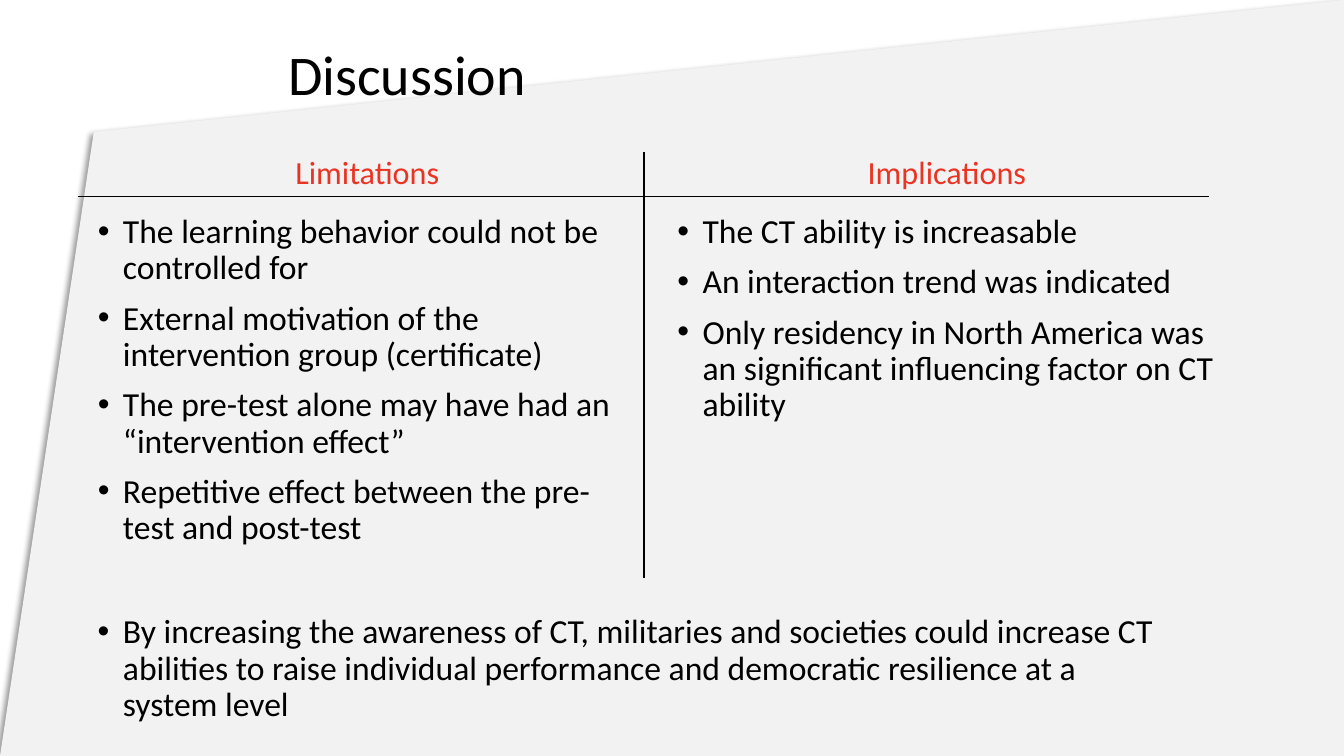
from dataclasses import dataclass

from lxml.etree import SubElement
from pptx import Presentation
from pptx.dml.color import RGBColor
from pptx.enum.shapes import MSO_CONNECTOR as Connector
from pptx.enum.text import MSO_ANCHOR as Anchor, MSO_AUTO_SIZE as AutoSize, PP_ALIGN as Align
from pptx.oxml.ns import qn
from pptx.shapes.base import BaseShape
from pptx.slide import Slide
from pptx.text.text import TextFrame
from pptx.util import Pt

COLOURS = {"text": "000000", "heading": "EA3423", "panel": "F2F2F2", "shadow": "000000"}
FONT = "Calibri"
WIDTH, HEIGHT = 960, 540
LEFT, RIGHT, COLUMN_WIDTH = 66.24, 480.24, 392.4
HEADING_TOP, LIST_TOP = 108.7, 149.76
PANEL_CORNERS = [(67, 94.3), (WIDTH, 0), (WIDTH, HEIGHT), (0, HEIGHT)]


@dataclass
class TextBlock:
    left: float
    top: float
    width: float
    height: float
    lines: list[str]
    size: float = 24
    colour: str = "text"
    bulleted: bool = True


@dataclass
class Rule:
    start: tuple[float, float]
    end: tuple[float, float]


TITLE = TextBlock(202.3, 18.7, 691.9, 73.4, ["Discussion"], 40, bulleted=False)
BLOCKS = [
    TextBlock(LEFT, LIST_TOP, COLUMN_WIDTH, 252.7, [
        "The learning behavior could not be controlled for",
        "External motivation of the intervention group (certificate)",
        "The pre-test alone may have had an “intervention effect”",
        "Repetitive effect between the pre-test and post-test",
    ]),
    TextBlock(RIGHT, LIST_TOP, COLUMN_WIDTH, 319, [
        "The CT ability is increasable",
        "An interaction trend was indicated",
        "Only residency in North America was an significant influencing factor on CT ability",
    ]),
    TextBlock(LEFT, 435.6, 770.4, 84.2, [
        "By increasing the awareness of CT, militaries and societies could increase CT "
        "abilities to raise individual performance and democratic resilience at a system level",
    ]),
    TextBlock(LEFT, HEADING_TOP, COLUMN_WIDTH, 41.8, ["Limitations"], 23, "heading", False),
    TextBlock(RIGHT, HEADING_TOP, COLUMN_WIDTH, 41.8, ["Implications"], 23, "heading", False),
]
RULES = [Rule((460.1, 412.6), (460.1, HEADING_TOP)), Rule((863.3, 140.4), (55.4, 140.4))]


def colour(name: str) -> RGBColor:
    """Return a named colour."""
    return RGBColor.from_string(COLOURS[name])


def fill_text(text_frame: TextFrame, block: TextBlock, alignment: Align) -> None:
    """Write and format the lines of a block."""
    text_frame.word_wrap = True
    text_frame.auto_size = AutoSize.NONE
    text_frame.margin_left = text_frame.margin_right = Pt(3.6)
    text_frame.margin_top = text_frame.margin_bottom = Pt(3.6)
    text_frame.text = "\n".join(block.lines)
    for index, paragraph in enumerate(text_frame.paragraphs):
        if block.bulleted:
            properties = paragraph._p.get_or_add_pPr()
            properties.set("marL", str(Pt(18)))
            properties.set("indent", str(Pt(-18)))
            SubElement(properties, qn("a:buFont"), typeface="Arial")
            SubElement(properties, qn("a:buChar"), char="•")
        paragraph.alignment = alignment
        paragraph.line_spacing = 0.9
        paragraph.space_before = Pt(10 if index else 0)
        for run in paragraph.runs:
            run.font.name = FONT
            run.font.size = Pt(block.size)
            run.font.color.rgb = colour(block.colour)


def draw_panel(slide: Slide) -> BaseShape:
    """Draw the slanted background panel with its shadow."""
    corners = [(Pt(x), Pt(y)) for x, y in PANEL_CORNERS]
    builder = slide.shapes.build_freeform(*corners[0])
    builder.add_line_segments(corners[1:], close=True)
    panel = builder.convert_to_shape()
    panel.fill.solid()
    panel.fill.fore_color.rgb = colour("panel")
    panel.line.fill.background()
    panel.shadow.inherit = False
    effects = panel.element.spPr.find(qn("a:effectLst"))
    shadow = SubElement(effects, qn("a:outerShdw"), blurRad=str(Pt(4)), dist=str(Pt(3)),
                        dir=str(135 * 60000), algn="tr", rotWithShape="0")
    shadow_colour = SubElement(shadow, qn("a:srgbClr"), val=COLOURS["shadow"])
    SubElement(shadow_colour, qn("a:alpha"), val="40000")
    return panel


def draw_title(slide: Slide, block: TextBlock) -> BaseShape:
    """Place and format the title placeholder."""
    title = slide.shapes.title
    title.left, title.top = Pt(block.left), Pt(block.top)
    title.width, title.height = Pt(block.width), Pt(block.height)
    fill_text(title.text_frame, block, Align.LEFT)
    title.text_frame.vertical_anchor = Anchor.MIDDLE
    return title


def draw_block(slide: Slide, block: TextBlock) -> None:
    """Draw a bulleted list or a centred heading."""
    shape = slide.shapes.add_textbox(Pt(block.left), Pt(block.top), Pt(block.width), Pt(block.height))
    fill_text(shape.text_frame, block, Align.LEFT if block.bulleted else Align.CENTER)


def draw_rule(slide: Slide, rule: Rule) -> None:
    """Draw a thin straight divider."""
    points = [Pt(value) for value in (*rule.start, *rule.end)]
    connector = slide.shapes.add_connector(Connector.STRAIGHT, *points)
    connector.line.color.rgb = colour("text")
    connector.line.width = Pt(1)
    SubElement(connector.element.spPr, qn("a:effectLst"))


def main() -> None:
    """Build and save the slide."""
    presentation = Presentation()
    presentation.slide_width, presentation.slide_height = Pt(WIDTH), Pt(HEIGHT)
    slide = presentation.slides.add_slide(presentation.slide_layouts[5])
    panel = draw_panel(slide)
    title = draw_title(slide, TITLE)
    title.element.addprevious(panel.element)
    for block in BLOCKS:
        draw_block(slide, block)
    for rule in RULES:
        draw_rule(slide, rule)
    presentation.save("out.pptx")


if __name__ == "__main__":
    main()
